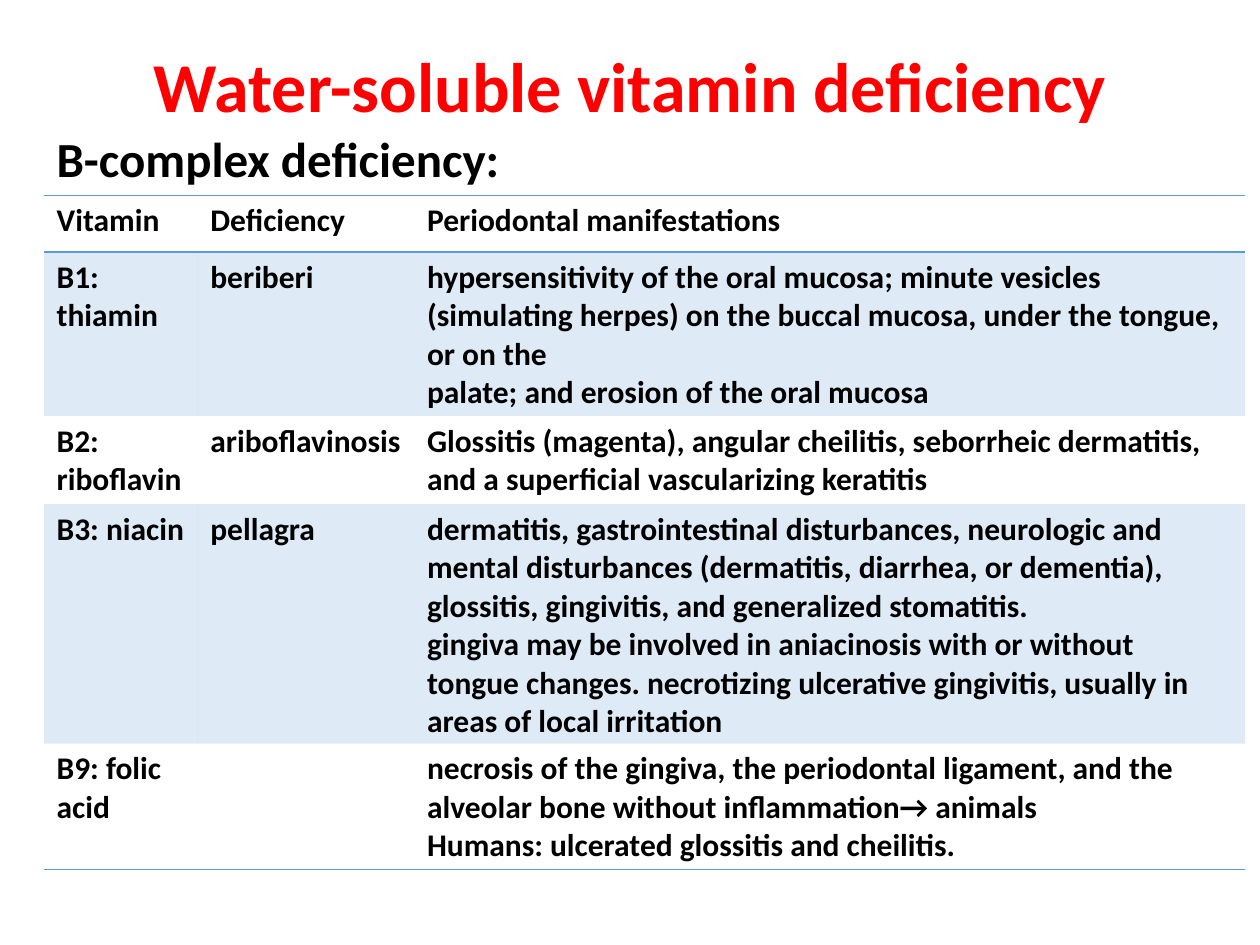
import dataclasses

import pptx
import pptx.dml.color
import pptx.enum.text
import pptx.oxml.ns
import pptx.util
from lxml import etree
from pptx.util import Inches


@dataclasses.dataclass(frozen=True)
class Theme:
    font: str = "Calibri"
    red: str = "FF0000"
    black: str = "000000"
    blue: str = "5B9BD5"
    title_size: int = 40
    heading_size: int = 28
    table_size: int = 18


theme = Theme()
qn = pptx.oxml.ns.qn
NO_STYLE_NO_GRID = "{2D5ABB26-0587-4C30-8999-92F81FD0307C}"


def write_text(frame, text, size=theme.table_size, color=theme.black,
               align=pptx.enum.text.PP_ALIGN.LEFT, spacing=1.0, before=0):
    """Fill a text frame with bold text, one paragraph per line."""
    frame.word_wrap = True
    for index, line in enumerate(text.split("\n")):
        para = frame.paragraphs[0] if index == 0 else frame.add_paragraph()
        para.alignment = align
        para.line_spacing = spacing
        para.space_before = pptx.util.Pt(before)
        para.font.size = pptx.util.Pt(size)
        if not line:
            continue
        span = para.add_run()
        span.text = line
        span.font.name = theme.font
        span.font.size = pptx.util.Pt(size)
        span.font.bold = True
        span.font.color.rgb = pptx.dml.color.RGBColor.from_string(color)


def add_border(cell, side):
    """Draw a 1 pt blue line on the side lnT or lnB of a cell."""
    line = etree.SubElement(cell._tc.get_or_add_tcPr(), qn(f"a:{side}"),
                            w=str(pptx.util.Pt(1)))
    fill = etree.SubElement(line, qn("a:solidFill"))
    etree.SubElement(fill, qn("a:srgbClr"), val=theme.blue)


deck = pptx.Presentation()
deck.slide_width, deck.slide_height = Inches(10), Inches(7.5)
slide = deck.slides.add_slide(deck.slide_layouts[6])

# Title and heading
title = slide.shapes.add_textbox(Inches(0.69), Inches(-0.01), Inches(8.62), Inches(1.45))
title.text_frame.vertical_anchor = pptx.enum.text.MSO_ANCHOR.MIDDLE
write_text(title.text_frame, "Water-soluble vitamin deficiency", size=theme.title_size,
           color=theme.red, align=pptx.enum.text.PP_ALIGN.CENTER, spacing=0.9)

heading = slide.shapes.add_textbox(Inches(0.35), Inches(1.02), Inches(8.62), Inches(4.76))
write_text(heading.text_frame, "B-complex deficiency:", size=theme.heading_size,
           spacing=0.9, before=10)

# Vitamin table
rows = [
    ("Vitamin", "Deficiency", "Periodontal manifestations"),
    ("B1: thiamin", "beriberi",
     "hypersensitivity of the oral mucosa; minute vesicles (simulating herpes) "
     "on the buccal mucosa, under the tongue, or on the\n"
     "palate; and erosion of the oral mucosa"),
    ("B2: riboflavin", "ariboflavinosis",
     "Glossitis (magenta), angular cheilitis, seborrheic dermatitis, "
     "and a superficial vascularizing keratitis"),
    ("B3: niacin", "pellagra",
     "dermatitis, gastrointestinal disturbances, neurologic and mental disturbances "
     "(dermatitis, diarrhea, or dementia), glossitis, gingivitis, "
     "and generalized stomatitis.\n"
     "gingiva may be involved in aniacinosis with or without tongue changes. "
     "necrotizing ulcerative gingivitis, usually in areas of local irritation"),
    ("B9: folic acid", "",
     "necrosis of the gingiva, the periodontal ligament, and the alveolar bone "
     "without inflammation→ animals\n"
     "Humans: ulcerated glossitis and cheilitis."),
]
column_widths = [1.22, 1.72, 6.59]
row_heights = [0.45, 1.3, 0.7, 1.9, 1.0]

table = slide.shapes.add_table(len(rows), len(column_widths), Inches(0.35), Inches(1.55),
                               Inches(9.53), Inches(5.35)).table
table._tbl.tblPr.find(qn("a:tableStyleId")).text = NO_STYLE_NO_GRID
for column, width in zip(table.columns, column_widths):
    column.width = Inches(width)

for row_index, (texts, height) in enumerate(zip(rows, row_heights)):
    table.rows[row_index].height = Inches(height)
    for column_index, text in enumerate(texts):
        cell = table.cell(row_index, column_index)
        write_text(cell.text_frame, text)
        if row_index == 0:
            add_border(cell, "lnT")
        if row_index in (0, len(rows) - 1):
            add_border(cell, "lnB")
        if row_index % 2:
            cell.fill.solid()
            cell.fill.fore_color.rgb = pptx.dml.color.RGBColor.from_string(theme.blue)
            tint = cell._tc.tcPr.find(qn("a:solidFill")).find(qn("a:srgbClr"))
            etree.SubElement(tint, qn("a:alpha"), val="20000")
        else:
            cell.fill.background()

deck.save("out.pptx")
